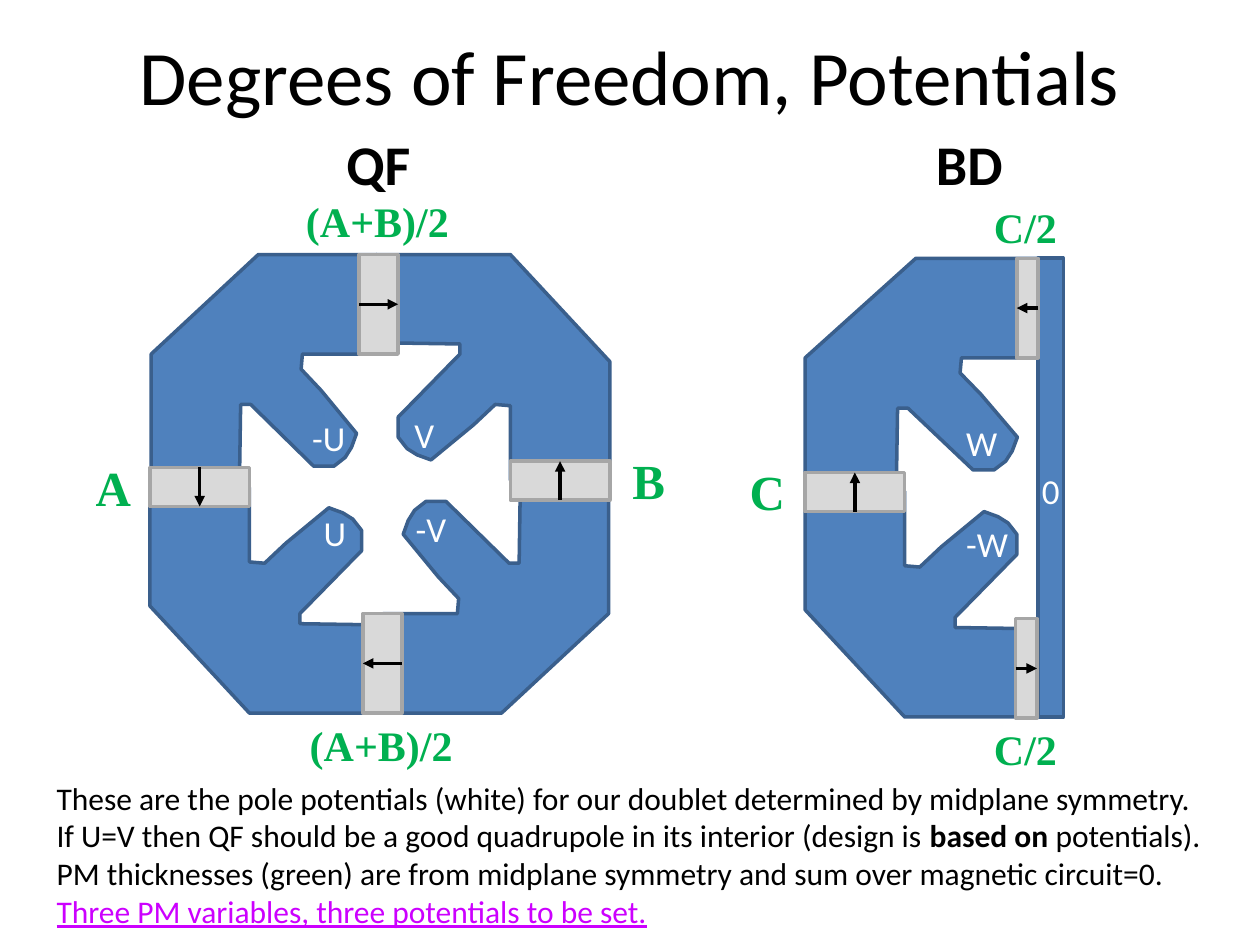
from lxml import etree
from pptx import Presentation
from pptx.dml.color import RGBColor
from pptx.enum import shapes, text
from pptx.oxml import ns
from pptx.util import Inches, Pt

COLORS = {
    "iron": "4F81BD", "iron_edge": "3A5F8C", "magnet": "D9D9D9", "magnet_edge": "A6A6A6",
    "black": "000000", "white": "FFFFFF", "green": "00B050", "violet": "CC00FF",
}
COLORS = {name: RGBColor.from_string(value) for name, value in COLORS.items()}

deck = Presentation()
deck.slide_width, deck.slide_height = Inches(10), Inches(7.5)
page = deck.slides.add_slide(deck.slide_layouts[5])


def paint(shape, fill, edge):
    shape.shadow.inherit = False
    shape.fill.solid()
    shape.fill.fore_color.rgb = COLORS[fill]
    shape.line.color.rgb = COLORS[edge]
    shape.line.width = Pt(2)


def add_text(left, top, width, height, lines, size, color, font="Calibri", bold=None):
    box = page.shapes.add_textbox(Inches(left), Inches(top), Inches(width), Inches(height))
    frame = box.text_frame
    frame.word_wrap = False
    frame.auto_size = text.MSO_AUTO_SIZE.SHAPE_TO_FIT_TEXT
    frame.text = "\n".join(lines)
    for para in frame.paragraphs:
        para.font.size = Pt(size)
        para.font.name = font
        para.font.bold = bold
        para.font.color.rgb = COLORS[color]
    return frame


title = page.shapes.title
title.left, title.top = Inches(0.5), Inches(-0.03)
title.width, title.height = Inches(9), Inches(1.25)
title.text_frame.text = "Degrees of Freedom, Potentials"
title.text_frame.vertical_anchor = text.MSO_ANCHOR.MIDDLE
heading = title.text_frame.paragraphs[0]
heading.alignment = text.PP_ALIGN.CENTER
heading.font.size = Pt(44)
heading.font.name = "Calibri"
heading.font.color.rgb = COLORS["black"]

yoke_outline = [
    (0, 1.85), (0, 0.79), (0.85, 0), (1.79, 0), (1.79, 0.79), (1.2, 0.79),
    (1.19, 0.91), (1.35, 1.08), (1.63, 1.42), (1.59, 1.53), (1.54, 1.61),
    (1.45, 1.68), (1.29, 1.68), (0.79, 1.19), (0.71, 1.19), (0.7, 1.83),
]
yokes = [
    (1.2, 2.02, 1.79, 0), (3.02, 1.99, 1.79, 90), (3.04, 3.81, 1.79, 180),
    (1.22, 3.84, 1.79, 270), (6.39, 2.05, 1.85, 0), (6.42, 3.87, 1.79, 270),
]
for left, top, width, turn in yokes:
    points = [(Inches(x), Inches(y)) for x, y in yoke_outline]
    builder = page.shapes.build_freeform(*points[0])
    builder.add_line_segments(points[1:], close=True)
    yoke = builder.convert_to_shape(Inches(left), Inches(top))
    yoke.width = Inches(width)
    yoke.rotation = turn
    paint(yoke, "iron", "iron_edge")

plate = page.shapes.add_shape(
    shapes.MSO_SHAPE.RECTANGLE, Inches(8.24), Inches(2.05), Inches(0.2), Inches(3.64))
paint(plate, "iron", "iron_edge")

magnet_height = 0.79
magnets = [
    (2.85, 2.02, 0.31, 0, 1), (2.88, 4.87, 0.31, 0, -1),
    (1.43, 3.47, 0.31, 90, 1), (4.29, 3.42, 0.31, 90, -1), (6.63, 3.51, 0.31, 90, -1),
    (8.07, 2.05, 0.17, 0, -1), (8.06, 4.91, 0.17, 0, 1),
]
for left, top, thickness, turn, sign in magnets:
    magnet = page.shapes.add_shape(
        shapes.MSO_SHAPE.RECTANGLE,
        Inches(left), Inches(top), Inches(thickness), Inches(magnet_height))
    magnet.rotation = turn
    paint(magnet, "magnet", "magnet_edge")

for left, top, thickness, turn, sign in magnets:
    center_x, center_y = left + thickness / 2, top + magnet_height / 2
    reach = sign * thickness / 2
    dx, dy = (0, reach) if turn else (reach, 0)
    arrow = page.shapes.add_connector(
        shapes.MSO_CONNECTOR.STRAIGHT,
        Inches(center_x - dx), Inches(center_y - dy),
        Inches(center_x + dx), Inches(center_y + dy))
    arrow.line.color.rgb = COLORS["black"]
    arrow.line.width = Pt(2)
    etree.SubElement(arrow.line._get_or_add_ln(), ns.qn("a:tailEnd"), type="triangle")
    etree.SubElement(arrow._element.spPr, ns.qn("a:effectLst"))

for left, width, label in [(2.65, 0.72, "QF"), (7.33, 0.74, "BD")]:
    add_text(left, 0.98, width, 0.64, [label], 32, "black", bold=True)

potentials = [
    (2.38, 3.26, 0.47, "-U"), (2.47, 4.01, 0.38, "U"),
    (3.19, 3.23, 0.36, "V"), (3.2, 3.98, 0.45, "-V"),
    (7.57, 3.3, 0.45, "W"), (7.57, 4.1, 0.54, "-W"), (8.17, 3.68, 0.34, "0"),
]
for left, top, width, label in potentials:
    add_text(left, top, width, 0.44, [label], 20, "white")

thickness_labels = [
    (0.66, 3.58, 0.49, 28, "A"), (4.92, 3.53, 0.46, 28, "B"), (5.85, 3.61, 0.49, 28, "C"),
    (2.33, 1.5, 1.35, 24, "(A+B)/2"), (2.36, 5.66, 1.35, 24, "(A+B)/2"),
    (7.79, 1.55, 0.71, 24, "C/2"), (7.79, 5.69, 0.71, 24, "C/2"),
]
for left, top, width, size, label in thickness_labels:
    height = 0.57 if size == 28 else 0.5
    add_text(left, top, width, height, [label], size, "green", "Times New Roman", True)

notes = add_text(0.35, 6.13, 9.32, 1.31, [
    "These are the pole potentials (white) for our doublet determined by midplane symmetry.",
    "If U=V then QF should be a good quadrupole in its interior (design is ",
    "PM thicknesses (green) are from midplane symmetry and sum over magnetic circuit=0.",
    "Three PM variables, three potentials to be set.",
], 18, "black")
for words, bold in [("based on", True), (" potentials).", False)]:
    span = notes.paragraphs[1].add_run()
    span.text = words
    span.font.bold = bold
conclusion = notes.paragraphs[3].runs[0]
conclusion.font.color.rgb = COLORS["violet"]
conclusion.font.underline = True

deck.save("out.pptx")
